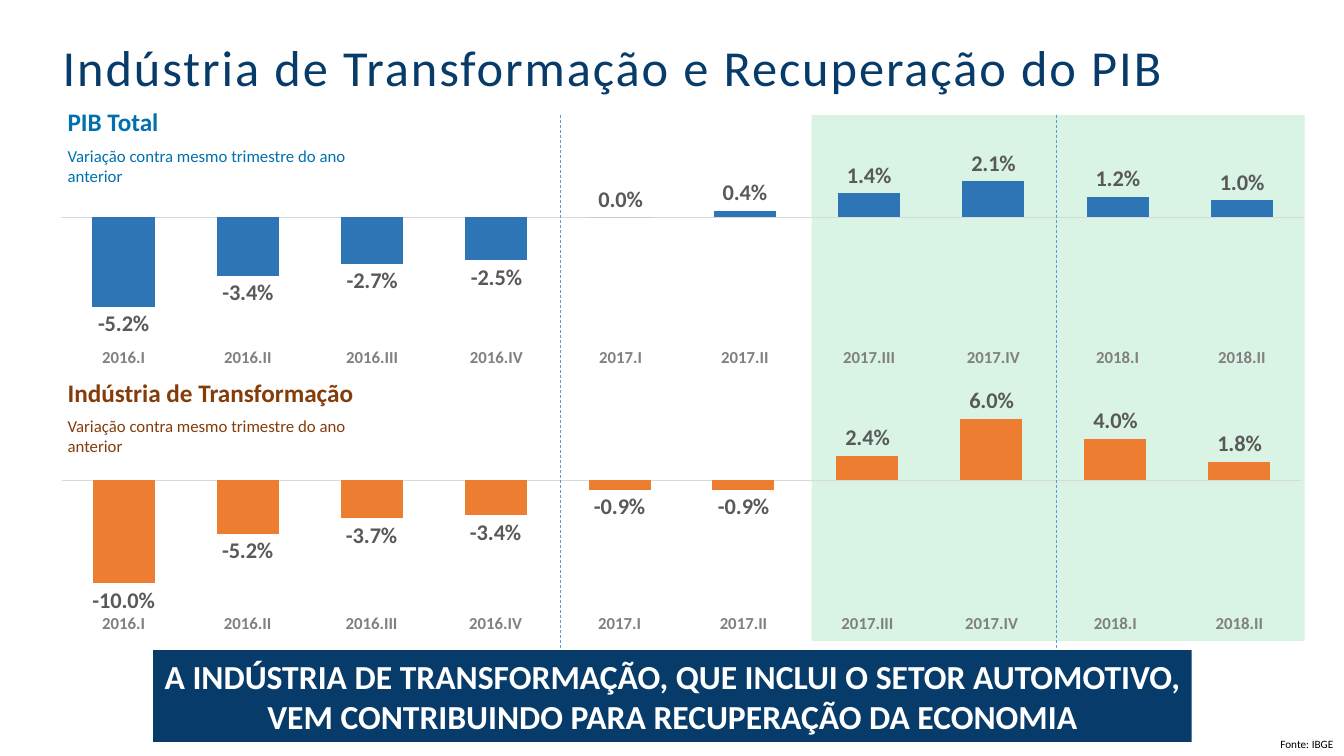
from dataclasses import dataclass

from lxml import etree
from pptx import Presentation
from pptx.chart.data import CategoryChartData
from pptx.dml.color import RGBColor
from pptx.enum.chart import XL_CHART_TYPE, XL_LABEL_POSITION, XL_TICK_LABEL_POSITION, XL_TICK_MARK
from pptx.enum.dml import MSO_LINE
from pptx.enum.shapes import MSO_CONNECTOR, MSO_SHAPE
from pptx.enum.text import MSO_ANCHOR, MSO_AUTO_SIZE, PP_ALIGN
from pptx.oxml import parse_xml
from pptx.oxml.ns import nsdecls, qn
from pptx.util import Pt

PX = 9144
FONT = "Calibri"
COLUMNS = XL_CHART_TYPE.COLUMN_CLUSTERED
OUTSIDE = XL_LABEL_POSITION.OUTSIDE_END
LOW = XL_TICK_LABEL_POSITION.LOW
NO_TICK = XL_TICK_MARK.NONE
DASH = MSO_LINE.DASH
STRAIGHT = MSO_CONNECTOR.STRAIGHT
RECT = MSO_SHAPE.RECTANGLE
TOP, MIDDLE = MSO_ANCHOR.TOP, MSO_ANCHOR.MIDDLE
GROW, FIXED = MSO_AUTO_SIZE.SHAPE_TO_FIT_TEXT, MSO_AUTO_SIZE.NONE
LEFT, CENTER = PP_ALIGN.LEFT, PP_ALIGN.CENTER

COLORS = {
    "navy": "073B69", "blue": "0071AE", "brown": "843C0B", "green": "00B050",
    "bar_blue": "2E75B6", "bar_orange": "ED7D31", "divider": "5B9BD5",
    "axis": "D9D9D9", "category": "808080", "label": "595959",
    "white": "FFFFFF", "black": "000000",
}
QUARTERS = ["2016.I", "2016.II", "2016.III", "2016.IV", "2017.I",
            "2017.II", "2017.III", "2017.IV", "2018.I", "2018.II"]
SUBTITLE = "Variação contra mesmo trimestre do ano anterior"
DIVIDERS = [556, 1048]


@dataclass
class Box:
    x: int
    y: int
    w: int
    h: int

    def emu(self) -> list[int]:
        return [v * PX for v in (self.x, self.y, self.w, self.h)]


@dataclass
class Panel:
    heading: str
    text_color: str
    heading_box: Box
    bar_color: str
    chart_box: Box
    plot: tuple[float, float, float, float]
    limits: tuple[float, float]
    values: list[float]


PANELS = [
    Panel("PIB Total", "blue", Box(62, 101, 341, 77), "bar_blue",
          Box(46, 146, 1248, 222), (0.012, 0.084, 0.988, 0.768), (-0.07, 0.03),
          [-0.052, -0.034, -0.027, -0.025, 0, 0.004, 0.014, 0.021, 0.012, 0.01]),
    Panel("Indústria de Transformação", "brown", Box(62, 369, 341, 77), "bar_orange",
          Box(46, 381, 1260, 254), (0.012, 0.055, 0.976, 0.803), (-0.12, 0.08),
          [-0.1, -0.052, -0.037, -0.034, -0.009, -0.009, 0.024, 0.06, 0.04, 0.018]),
]


def rgb(name: str) -> RGBColor:
    return RGBColor.from_string(COLORS[name])


def apply(target, values: dict) -> None:
    for name, value in values.items():
        setattr(target, name, value)


def style_font(font, size: int, color: str, bold: bool = False) -> None:
    apply(font, {"name": FONT, "size": Pt(size), "bold": bold})
    font.color.rgb = rgb(color)


def add_run(p, text: str, size: int, color: str, bold: bool = False):
    r = p.add_run()
    r.text = text
    style_font(r.font, size, color, bold)
    return r


def set_margins(tf, margin: int) -> None:
    apply(tf, dict.fromkeys(
        ("margin_left", "margin_top", "margin_right", "margin_bottom"), margin * PX))


def add_rect(s, box: Box, color: str):
    sp = s.shapes.add_shape(RECT, *box.emu())
    sp.shadow.inherit = False
    sp.fill.solid()
    sp.fill.fore_color.rgb = rgb(color)
    sp.line.fill.background()
    return sp


def add_title(s, box: Box, text: str) -> None:
    sp = s.shapes.title
    apply(sp, dict(zip(("left", "top", "width", "height"), box.emu())))
    tf = sp.text_frame
    set_margins(tf, 0)
    apply(tf, {"auto_size": FIXED, "vertical_anchor": TOP, "word_wrap": True})
    p = tf.paragraphs[0]
    apply(p, {"alignment": LEFT, "line_spacing": Pt(40)})
    r = add_run(p, text, 36, "navy")
    r.font._element.set("spc", "140")


def add_chart(s, panel: Panel) -> None:
    data = CategoryChartData(number_format="0.0%")
    data.categories = QUARTERS
    data.add_series("Series 1", panel.values)
    chart = s.shapes.add_chart(COLUMNS, *panel.chart_box.emu(), data).chart
    apply(chart, {"has_legend": False, "has_title": False})
    style_font(chart.font, 10, "black")

    plot = chart.plots[0]
    apply(plot, {"gap_width": 100, "overlap": -27,
                 "vary_by_categories": False, "has_data_labels": True})
    labels = plot.data_labels
    apply(labels, {"show_value": True, "position": OUTSIDE,
                   "number_format": "0.0%", "number_format_is_linked": False})
    style_font(labels.font, 16, "label", True)
    series = plot.series[0]
    series.invert_if_negative = False
    series.format.fill.solid()
    series.format.fill.fore_color.rgb = rgb(panel.bar_color)

    low, high = panel.limits
    apply(chart.value_axis, {"minimum_scale": low, "maximum_scale": high,
                             "has_major_gridlines": False, "visible": False})
    axis = chart.category_axis
    apply(axis, {"tick_label_position": LOW, "major_tick_mark": NO_TICK,
                 "minor_tick_mark": NO_TICK, "has_major_gridlines": False})
    style_font(axis.tick_labels.font, 12, "category", True)
    axis.format.line.color.rgb = rgb("axis")
    axis.format.line.width = Pt(0.75)

    area = chart._chartSpace.chart.plotArea
    for old in area.findall(qn("c:layout")):
        area.remove(old)
    parts = "".join(f'<c:{k} val="{v}"/>' for k, v in zip("xywh", panel.plot))
    area.insert(0, parse_xml(
        f'<c:layout {nsdecls("c")}><c:manualLayout><c:layoutTarget val="inner"/>'
        f'<c:xMode val="edge"/><c:yMode val="edge"/>{parts}</c:manualLayout></c:layout>'))


def add_heading(s, panel: Panel) -> None:
    tf = s.shapes.add_textbox(*panel.heading_box.emu()).text_frame
    set_margins(tf, 5)
    apply(tf, {"word_wrap": True, "auto_size": GROW})
    for i, (text, size) in enumerate([(panel.heading, 18), (SUBTITLE, 12)]):
        p = tf.add_paragraph() if i else tf.paragraphs[0]
        p.space_before = Pt(6)
        add_run(p, text, size, panel.text_color, i == 0)


def add_divider(s, x: int) -> None:
    line = s.shapes.add_connector(STRAIGHT, x * PX, 114 * PX, x * PX, 720 * PX)
    line.line.color.rgb = rgb("divider")
    apply(line.line, {"width": Pt(0.5), "dash_style": DASH})
    etree.SubElement(line._element.spPr, qn("a:effectLst"))


def main() -> None:
    prs = Presentation()
    apply(prs, {"slide_width": 1333 * PX, "slide_height": 750 * PX})
    s = prs.slides.add_slide(prs.slide_layouts[5])

    recovery = add_rect(s, Box(805, 114, 489, 522), "green")
    color = recovery._element.spPr.find(".//" + qn("a:srgbClr"))
    etree.SubElement(color, qn("a:alpha")).set("val", "15000")

    add_title(s, Box(62, 40, 1272, 55), "Indústria de Transformação e Recuperação do PIB")
    for panel in PANELS:
        add_chart(s, panel)
    for panel in PANELS:
        add_heading(s, panel)
    for x in DIVIDERS:
        add_divider(s, x)

    tf = s.shapes.add_textbox(*Box(1260, 727, 73, 24).emu()).text_frame
    apply(tf, {"word_wrap": False, "auto_size": GROW})
    add_run(tf.paragraphs[0], "Fonte: IBGE", 8, "black")

    tf = add_rect(s, Box(152, 645, 1030, 91), "navy").text_frame
    apply(tf, {"word_wrap": True, "auto_size": GROW, "vertical_anchor": MIDDLE})
    p = tf.paragraphs[0]
    p.alignment = CENTER
    add_run(p, "A INDÚSTRIA DE TRANSFORMAÇÃO, QUE INCLUI O SETOR AUTOMOTIVO, "
               "VEM CONTRIBUINDO PARA RECUPERAÇÃO DA ECONOMIA", 24, "white", True)
    prs.save("out.pptx")


if __name__ == "__main__":
    main()
